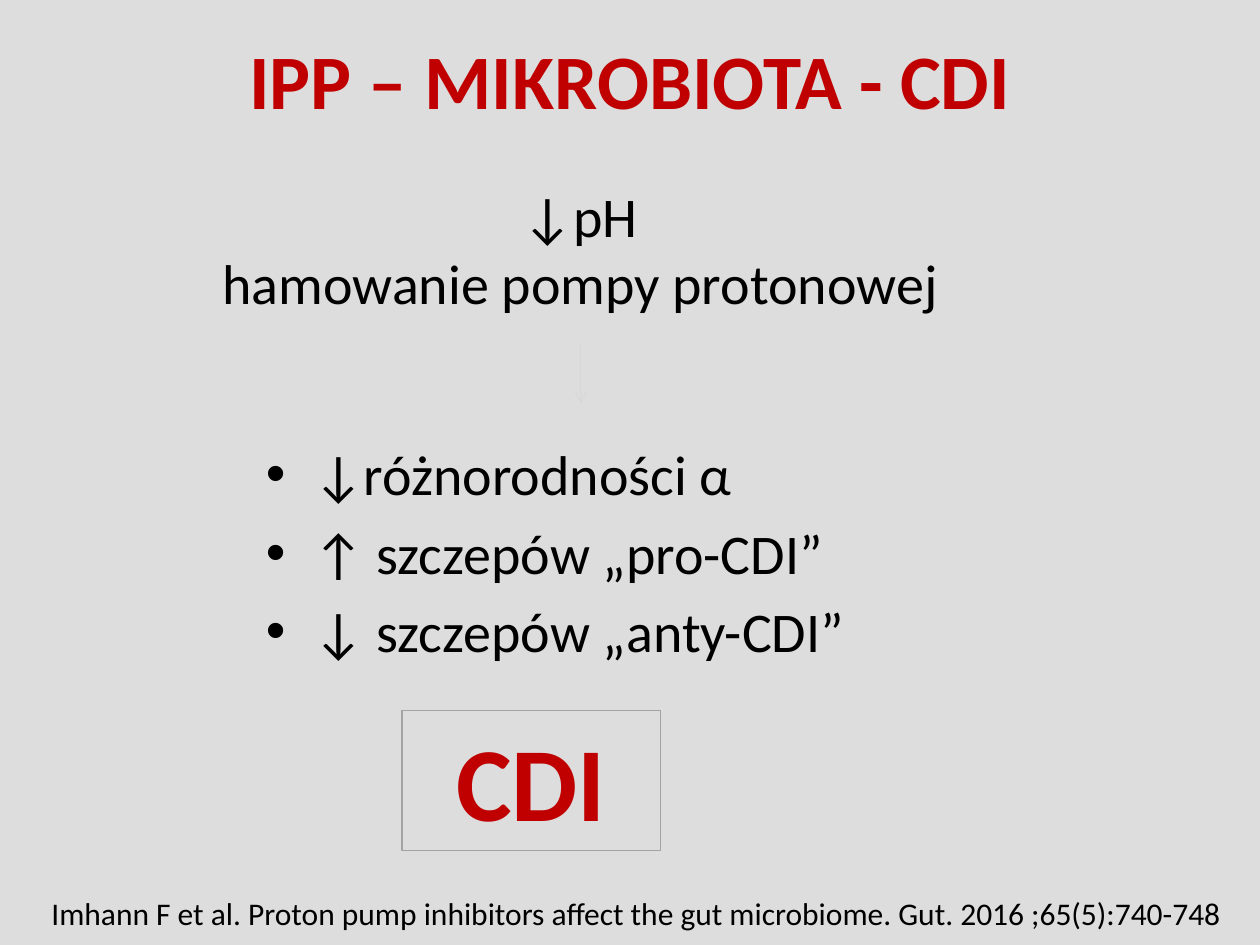
"""Build a slide on proton pump inhibitors, the microbiota and CDI."""
import pptx
import pptx.dml.color
import pptx.enum.shapes
import pptx.enum.text
import pptx.oxml.ns
import pptx.util
from lxml import etree

Inches = pptx.util.Inches
Pt = pptx.util.Pt
RGBColor = pptx.dml.color.RGBColor
PP_ALIGN = pptx.enum.text.PP_ALIGN
ANCHOR = pptx.enum.text.MSO_ANCHOR
qn = pptx.oxml.ns.qn

BACKGROUND = RGBColor(0xDD, 0xDD, 0xDD)
ARROW = RGBColor(0xD8, 0xD8, 0xD8)
BORDER = RGBColor(0xA3, 0xA3, 0xA3)
RED = RGBColor(0xC0, 0x00, 0x00)
BLACK = RGBColor(0x00, 0x00, 0x00)
FONT = "Calibri"


def place(s, left, top, width, height):
    s.left, s.top = Inches(left), Inches(top)
    s.width, s.height = Inches(width), Inches(height)


def outline(s, color):
    s.line.color.rgb = color
    s.line.width = Pt(0.75)


def write(s, lines, size, color=BLACK, bold=False, align=None, anchor=ANCHOR.TOP):
    tf = s.text_frame
    tf.word_wrap = True
    tf.auto_size = pptx.enum.text.MSO_AUTO_SIZE.NONE
    tf.vertical_anchor = anchor
    for i, line in enumerate(lines):
        p = tf.add_paragraph() if i else tf.paragraphs[0]
        p.alignment = align
        r = p.add_run()
        r.text = line
        r.font.name = FONT
        r.font.size = Pt(size)
        r.font.bold = bold
        r.font.color.rgb = color


def add_title(slide, text):
    s = slide.shapes.title
    place(s, 0.5, 0, 9, 1.25)
    write(s, [text], 44, RED, True, PP_ALIGN.CENTER, ANCHOR.MIDDLE)


def add_bullets(slide, lines, box):
    s = slide.placeholders[1]
    place(s, *box)
    outline(s, BACKGROUND)
    write(s, lines, 32)
    s.text_frame.paragraphs[0].space_before = Pt(6.4)


def add_box(slide, lines, box, border, size, color=BLACK, bold=False):
    s = slide.shapes.add_shape(
        pptx.enum.shapes.MSO_SHAPE.RECTANGLE, *map(Inches, box))
    s.shadow.inherit = False
    s.fill.background()
    outline(s, border)
    write(s, lines, size, color, bold, PP_ALIGN.CENTER)


def add_arrow(slide, x, top, bottom):
    s = slide.shapes.add_connector(
        pptx.enum.shapes.MSO_CONNECTOR.STRAIGHT,
        Inches(x), Inches(top), Inches(x), Inches(bottom))
    outline(s, ARROW)
    etree.SubElement(s.line._get_or_add_ln(), qn("a:tailEnd"), type="arrow")
    etree.SubElement(s._element.spPr, qn("a:effectLst"))


def add_citation(slide, text):
    s = slide.shapes.add_textbox(*map(Inches, (0.31, 7.05, 9.8, 0.4)))
    write(s, [text], 18)


def main():
    prs = pptx.Presentation()
    prs.slide_width, prs.slide_height = Inches(10), Inches(7.5)
    slide = prs.slides.add_slide(prs.slide_layouts[1])
    slide.background.fill.solid()
    slide.background.fill.fore_color.rgb = BACKGROUND

    add_title(slide, "IPP – MIKROBIOTA - CDI")
    add_bullets(slide, ["↓różnorodności α", "↑ szczepów „pro-CDI”",
                        "↓ szczepów „anty-CDI”"], (2.01, 3.44, 4.97, 2.08))
    add_box(slide, ["↓pH", "hamowanie pompy protonowej"],
            (1.3, 1.39, 6.61, 1.18), BACKGROUND, 32)
    add_box(slide, ["CDI"], (3.19, 5.64, 2.05, 1.11), BORDER, 60, RED, True)
    add_arrow(slide, 4.61, 2.73, 3.2)
    add_citation(slide, "Imhann F et al. Proton pump inhibitors affect the gut "
                        "microbiome. Gut. 2016 ;65(5):740-748")
    prs.save("out.pptx")


if __name__ == "__main__":
    main()
